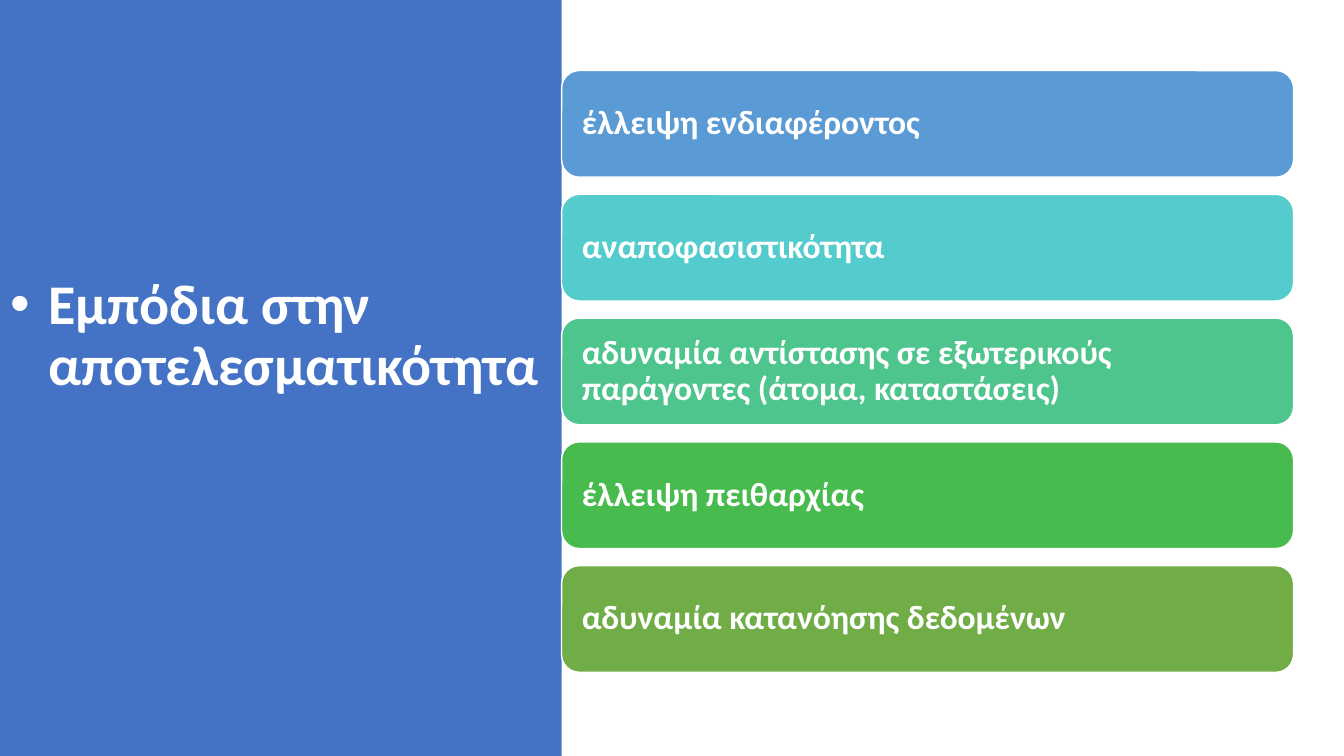
from lxml.etree import SubElement
from pptx import Presentation
from pptx.dml.color import RGBColor
from pptx.enum.shapes import MSO_SHAPE
from pptx.enum.text import MSO_ANCHOR, MSO_AUTO_SIZE, PP_ALIGN
from pptx.oxml.ns import qn
from pptx.util import Inches, Pt

HUES = {
    "white": "FFFFFF",
    "panel": "4472C4",
    "blue": "5B9BD5",
    "teal": "54CCCD",
    "mint": "4DC58D",
    "green": "48BB4F",
    "olive": "70AD47",
}
TITLE = "Εμπόδια στην αποτελεσματικότητα"
ITEMS = [
    ("έλλειψη ενδιαφέροντος", "blue"),
    ("αναποφασιστικότητα", "teal"),
    ("αδυναμία αντίστασης σε εξωτερικούς παράγοντες (άτομα, καταστάσεις)", "mint"),
    ("έλλειψη πειθαρχίας", "green"),
    ("αδυναμία κατανόησης δεδομένων", "olive"),
]


def hue(name):
    return RGBColor.from_string(HUES[name])


def add_box(slide, kind, box, fill):
    shape = slide.shapes.add_shape(kind, *map(Inches, box))
    shape.shadow.inherit = False
    shape.fill.solid()
    shape.fill.fore_color.rgb = hue(fill)
    shape.line.fill.background()
    return shape


def set_text(shape, text, size):
    frame = shape.text_frame
    frame.text = text
    frame.word_wrap = True
    frame.auto_size = MSO_AUTO_SIZE.NONE
    frame.vertical_anchor = MSO_ANCHOR.MIDDLE
    para = frame.paragraphs[0]
    para.alignment = PP_ALIGN.LEFT
    para.line_spacing = 0.9
    font = para.runs[0].font
    font.name = "Calibri"
    font.size = Pt(size)
    font.bold = True
    font.color.rgb = hue("white")
    return para


def add_bullet(para, indent):
    props = para._p.get_or_add_pPr()
    props.set("marL", str(Inches(indent)))
    props.set("indent", str(-Inches(indent)))
    SubElement(props, qn("a:buFont"), typeface="Arial")
    SubElement(props, qn("a:buChar"), char="•")


def add_panel(slide, box):
    left, top, width, height = box
    title = slide.shapes.title
    panel = add_box(slide, MSO_SHAPE.RECTANGLE, box, "panel")
    title.element.addprevious(panel.element)
    title.left, title.top = Inches(left), Inches(top + 0.68)
    title.width, title.height = Inches(width), Inches(height - 1.58)
    add_bullet(set_text(title, TITLE, 40), 0.38)
    frame = title.text_frame
    frame.margin_left = frame.margin_right = Inches(0.1)
    frame.margin_top = Inches(0.05)
    frame.margin_bottom = Inches(0.65)


def add_list(slide, box, gap):
    left, top, width, height = box
    tall = (height - gap * (len(ITEMS) - 1)) / len(ITEMS)
    for i, (text, fill) in enumerate(ITEMS):
        spot = (left, top + i * (tall + gap), width, tall)
        bar = add_box(slide, MSO_SHAPE.ROUNDED_RECTANGLE, spot, fill)
        bar.line.color.rgb = hue("white")
        bar.line.width = Pt(1)
        set_text(bar, text, 24)
        frame = bar.text_frame
        frame.margin_left = frame.margin_right = Inches(0.15)


def main():
    deck = Presentation()
    deck.slide_width, deck.slide_height = Inches(13.33), Inches(7.5)
    slide = deck.slides.add_slide(deck.slide_layouts[5])
    add_panel(slide, (0, 0, 5.57, 7.5))
    add_list(slide, (5.57, 0.7, 7.26, 5.97), 0.17)
    deck.save("out.pptx")


if __name__ == "__main__":
    main()
